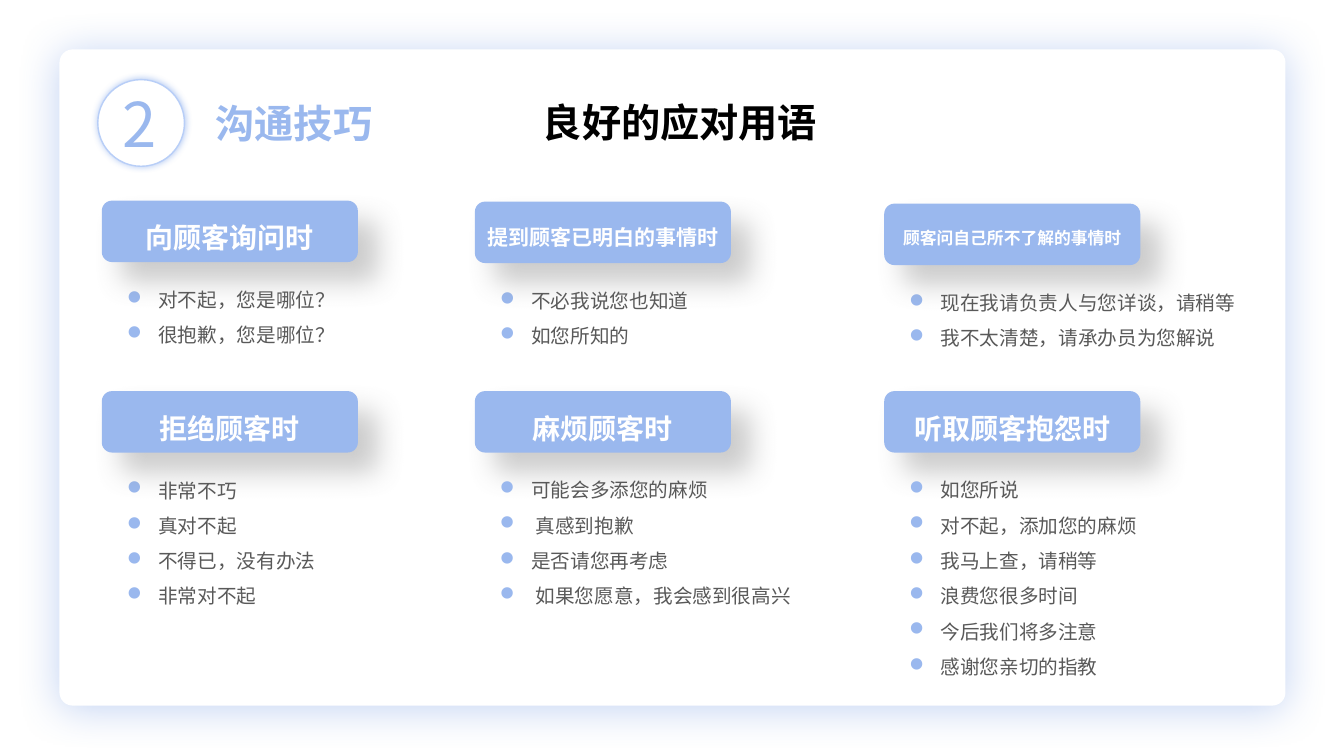
"""Builds the slide of good reply phrases for customer service."""
from lxml.etree import SubElement
from pptx import Presentation
from pptx.dml.color import RGBColor
from pptx.enum.shapes import MSO_SHAPE
from pptx.enum.text import MSO_ANCHOR, MSO_AUTO_SIZE, PP_ALIGN
from pptx.oxml.ns import qn
from pptx.util import Inches, Pt

TOPIC = "良好的应对用语"
SECTION_NUMBER, SECTION = "2", "沟通技巧"
CARDS = [
    [("向顾客询问时", 20, ["对不起，您是哪位？", "很抱歉，您是哪位？"]),
     ("提到顾客已明白的事情时", 15, ["不必我说您也知道", "如您所知的"]),
     ("顾客问自己所不了解的事情时", 12,
      ["现在我请负责人与您详谈，请稍等", "我不太清楚，请承办员为您解说"])],
    [("拒绝顾客时", 20, ["非常不巧", "真对不起", "不得已，没有办法", "非常对不起"]),
     ("麻烦顾客时", 20,
      ["可能会多添您的麻烦", " 真感到抱歉", "是否请您再考虑", " 如果您愿意，我会感到很高兴"]),
     ("听取顾客抱怨时", 20,
      ["如您所说", "对不起，添加您的麻烦", "我马上查，请稍等", "浪费您很多时间",
       "今后我们将多注意", "感谢您亲切的指教"])],
]
COLORS = {"blue": "9AB8EE", "ring": "B8CEF7", "white": "FFFFFF", "black": "000000",
          "body": "595959", "glow": "6891E1", "ring_glow": "3F78E2", "shade": "808080"}
FONT = "Noto Sans CJK SC"
BULLET_FONT, BULLET = "Wingdings", "l"
COLUMNS = [1.01, 4.71, 8.77]
ROWS = [[1.99, 2.0, 2.02], [3.88] * 3]
LABEL_W, LABEL_H = 2.54, 0.61
HEADING_RISE = 0.02
LIST_DX, LIST_DY, LIST_W = 0.15, 0.7, 3.93
LINE_H = 0.35


def box(*lengths):
    return [Inches(length) for length in lengths]


def write(frame, lines, size, color, bold=False, align=PP_ALIGN.LEFT, spacing=1.0,
          before=0, indent=0, bullet=None, anchor=MSO_ANCHOR.TOP):
    frame.word_wrap = True
    frame.auto_size = MSO_AUTO_SIZE.NONE
    frame.vertical_anchor = anchor
    for number, line in enumerate(lines):
        paragraph = frame.add_paragraph() if number else frame.paragraphs[0]
        paragraph.alignment = align
        paragraph.line_spacing = spacing
        paragraph.space_before = Pt(before)
        props = paragraph._p.get_or_add_pPr()
        props.set("marL", str(Inches(indent)))
        props.set("indent", str(-Inches(indent)))
        if bullet:
            SubElement(SubElement(props, qn("a:buClr")), qn("a:srgbClr"), val=COLORS["blue"])
            SubElement(props, qn("a:buFont"), typeface=BULLET_FONT, pitchFamily="2", charset="2")
            SubElement(props, qn("a:buChar"), char=bullet)
        else:
            SubElement(props, qn("a:buNone"))
        run = paragraph.add_run()
        run.text = line
        run.font.size, run.font.bold, run.font.name = Pt(size), bold, FONT
        run.font.color.rgb = RGBColor.from_string(COLORS[color])
        SubElement(run._r.get_or_add_rPr(), qn("a:ea"), typeface=FONT)


def add_panel(shapes, kind, place, shadow, fill="white", line=None, corner=None):
    panel = shapes.add_shape(kind, *box(*place))
    panel.fill.solid()
    panel.fill.fore_color.rgb = RGBColor.from_string(COLORS[fill])
    if line:
        panel.line.color.rgb = RGBColor.from_string(COLORS[line])
        panel.line.width = Pt(1)
    else:
        panel.line.fill.background()
    if corner:
        panel.adjustments[0] = corner
    color, blur, distance, angle = shadow
    effects = SubElement(panel._element.spPr, qn("a:effectLst"))
    outer = SubElement(effects, qn("a:outerShdw"), blurRad=str(Pt(blur)), dist=str(Pt(distance)),
                       dir=str(angle * 60000), algn="ctr", rotWithShape="0")
    tint = SubElement(outer, qn("a:srgbClr"), val=COLORS[color])
    SubElement(tint, qn("a:alpha"), val="40000")
    return panel


def place_text(holder, place, lines, **style):
    holder.left, holder.top, holder.width, holder.height = box(*place)
    write(holder.text_frame, lines, **style)


def main():
    deck = Presentation()
    deck.slide_width, deck.slide_height = box(13.33, 7.5)
    slide = deck.slides.add_slide(deck.slide_layouts.get_by_name("Comparison"))
    shapes = slide.shapes
    list_holders = [holder for holder in slide.placeholders if holder != shapes.title]

    backdrop = add_panel(shapes, MSO_SHAPE.ROUNDED_RECTANGLE, (0.59, 0.49, 12.16, 6.51),
                         ("glow", 30, 3, 90), corner=0.02)
    shapes._spTree.insert(2, backdrop._element)

    add_panel(shapes, MSO_SHAPE.OVAL, (0.97, 0.79, 0.86, 0.86),
              ("ring_glow", 5, 0, 0), line="ring")
    place_text(shapes.add_textbox(0, 0, 0, 0), (1.04, 0.8, 0.68, 0.84), [SECTION_NUMBER],
               size=44, color="blue", align=PP_ALIGN.CENTER, anchor=MSO_ANCHOR.MIDDLE)
    place_text(shapes.add_textbox(0, 0, 0, 0), (2.04, 0.93, 3.16, 0.57), [SECTION],
               size=28, color="blue", bold=True, anchor=MSO_ANCHOR.MIDDLE)
    place_text(shapes.title, (4.13, 0.96, 5.23, 0.56), [TOPIC], size=28, color="black",
               bold=True, align=PP_ALIGN.CENTER, spacing=0.9, before=10, indent=0.41,
               anchor=MSO_ANCHOR.MIDDLE)

    for tops, cards in zip(ROWS, CARDS):
        for left, top, (heading, size, phrases) in zip(COLUMNS, tops, cards):
            add_panel(shapes, MSO_SHAPE.ROUNDED_RECTANGLE, (left, top, LABEL_W, LABEL_H),
                      ("shade", 20, 20, 45), fill="blue")
            place_text(shapes.add_textbox(0, 0, 0, 0),
                       (left, top - HEADING_RISE, LABEL_W, LABEL_H), [heading],
                       size=size, color="white", bold=True, align=PP_ALIGN.CENTER,
                       spacing=1.5, anchor=MSO_ANCHOR.MIDDLE)
            holder = list_holders.pop(0) if list_holders else shapes.add_textbox(0, 0, 0, 0)
            place_text(holder, (left + LIST_DX, top + LIST_DY, LIST_W,
                                LINE_H * len(phrases) + 0.1),
                       phrases, size=14, color="body", spacing=1.5, indent=0.31, bullet=BULLET)

    deck.save("out.pptx")


if __name__ == "__main__":
    main()
